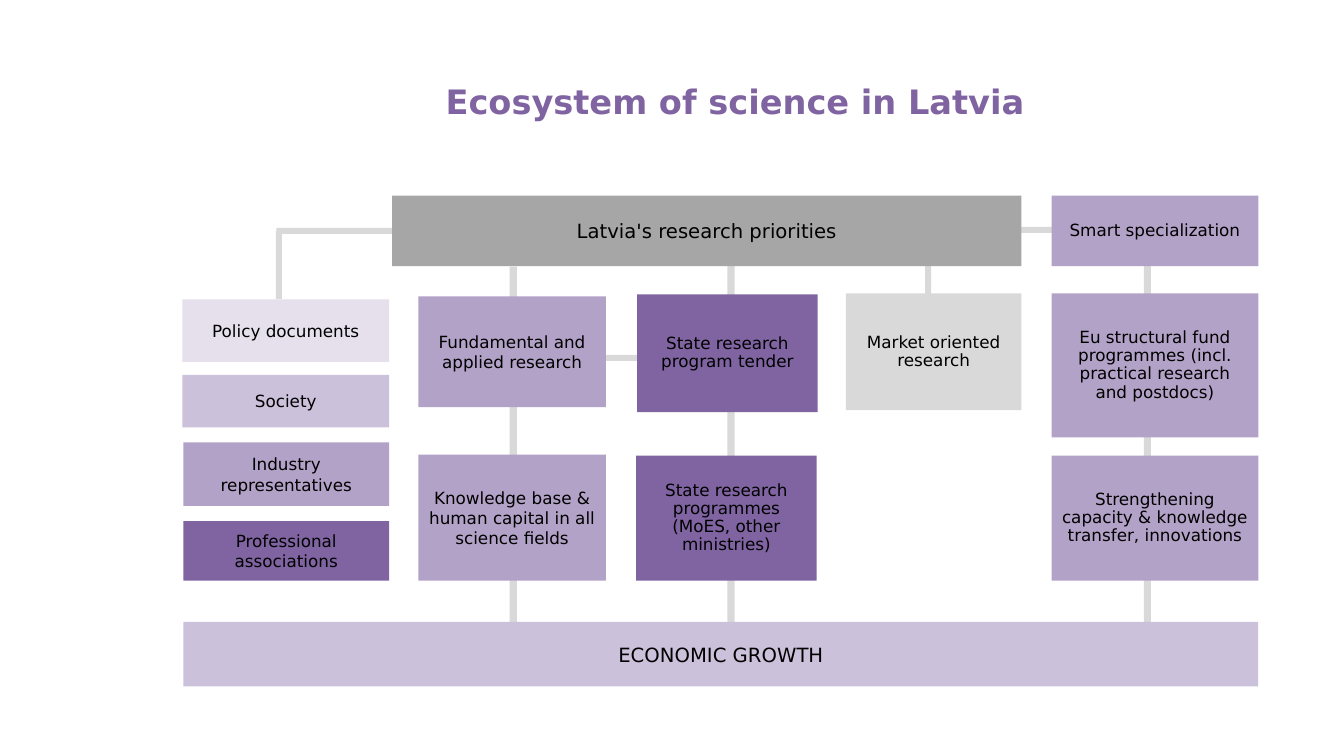
import pptx
import pptx.util
import pptx.dml.color
import pptx.enum.shapes
import pptx.enum.text

Inches, Pt = pptx.util.Inches, pptx.util.Pt
FONT = "DejaVu Sans"
COLOURS = {
    "text": "000000",
    "purple": "8064A2",
    "mauve": "B3A2C7",
    "lilac": "CCC1DA",
    "pale": "E6E0EC",
    "grey": "A6A6A6",
    "silver": "D9D9D9",
}
# Column: left, width, line spacing
COLUMNS = {
    "society": (1.81, 2.05, 1.0),
    "partners": (1.82, 2.04, 1.0),
    "fundamental": (4.15, 1.86, 1.0),
    "tender": (6.32, 1.79, 0.9),
    "programmes": (6.31, 1.79, 0.9),
    "market": (8.39, 1.74, 0.9),
    "european": (10.43, 2.05, 0.9),
    "priorities": (3.89, 6.24, 1.0),
    "growth": (1.82, 10.66, 1.0),
}
# Box: column, top, height, colour, text size, text
BOXES = [
    ("society", 2.97, 0.62, "pale", 12, "Policy documents"),
    ("society", 3.72, 0.52, "lilac", 12, "Society"),
    ("partners", 4.39, 0.63, "mauve", 12, "Industry representatives"),
    ("partners", 5.17, 0.59, "purple", 12, "Professional associations"),
    ("growth", 6.17, 0.64, "lilac", 14, "ECONOMIC GROWTH"),
    ("tender", 2.92, 1.17, "purple", 12, "State research program tender"),
    ("programmes", 4.52, 1.24, "purple", 12,
     "State research programmes (MoES, other ministries)"),
    ("fundamental", 4.51, 1.25, "mauve", 12,
     "Knowledge base & human capital in all science fields"),
    ("fundamental", 2.94, 1.1, "mauve", 12, "Fundamental and applied research"),
    ("market", 2.91, 1.16, "silver", 12, "Market oriented research"),
    ("priorities", 1.94, 0.7, "grey", 14, "Latvia's research priorities"),
    ("european", 4.52, 1.24, "mauve", 12,
     "Strengthening capacity & knowledge transfer, innovations"),
    ("european", 2.91, 1.43, "mauve", 12,
     "Eu structural fund programmes (incl. practical research and postdocs)"),
    ("european", 1.94, 0.7, "mauve", 12, "Smart specialization"),
]
# Bar: left, top, length, thickness, rotation
SPINE, BRIDGE = 3.66, 1.68
BARS = [
    (8.97, 2.25, BRIDGE, 0.06, 180),
    (2.43, 2.6, 0.67, 0.06, 90),
    (2.74, 2.26, BRIDGE, 0.06, 180),
    (5.27, 3.52, BRIDGE, 0.06, 180),
    (8.4, 3.15, 1.61, 0.06, 90),
    (9.55, 4.33, SPINE, 0.07, 90),
    (5.42, 4.36, SPINE, 0.07, 90),
    (3.26, 4.44, SPINE, 0.07, 90),
]


def colour(name):
    return pptx.dml.color.RGBColor.from_string(COLOURS[name])


def format_text(frame, text, size, colour_name, bold=False, spacing=1.0):
    frame.word_wrap = True
    para = frame.paragraphs[0]
    para.text = text
    para.alignment = pptx.enum.text.PP_ALIGN.CENTER
    para.line_spacing = spacing
    para.font.name = FONT
    para.font.size = Pt(size)
    para.font.bold = bold
    para.font.color.rgb = colour(colour_name)


def set_title(page, text):
    title = page.shapes.title
    title.left, title.top = Inches(1.99), Inches(0.75)
    title.width, title.height = Inches(10.6), Inches(0.62)
    frame = title.text_frame
    frame.auto_size = pptx.enum.text.MSO_AUTO_SIZE.NONE
    frame.vertical_anchor = pptx.enum.text.MSO_ANCHOR.TOP
    format_text(frame, text, 24, "purple", bold=True)


def add_rectangle(page, left, top, width, height, fill):
    rectangle = page.shapes.add_shape(
        pptx.enum.shapes.MSO_SHAPE.RECTANGLE,
        Inches(left), Inches(top), Inches(width), Inches(height))
    rectangle.shadow.inherit = False
    rectangle.fill.solid()
    rectangle.fill.fore_color.rgb = colour(fill)
    rectangle.line.fill.background()
    return rectangle


def add_bar(page, left, top, length, thickness, rotation):
    """Add a linking bar that the boxes partly cover."""
    bar = add_rectangle(page, left, top, length, thickness, "silver")
    bar.rotation = rotation


def add_box(page, column, top, height, fill, size, text):
    left, width, spacing = COLUMNS[column]
    box = add_rectangle(page, left, top, width, height, fill)
    box.text_frame.vertical_anchor = pptx.enum.text.MSO_ANCHOR.MIDDLE
    format_text(box.text_frame, text, size, "text", spacing=spacing)


def main():
    deck = pptx.Presentation()
    deck.slide_width, deck.slide_height = Inches(13.33), Inches(7.5)
    page = deck.slides.add_slide(deck.slide_layouts[5])
    set_title(page, "Ecosystem of science in Latvia")
    for bar in BARS:
        add_bar(page, *bar)
    for box in BOXES:
        add_box(page, *box)
    deck.save("out.pptx")


if __name__ == "__main__":
    main()
